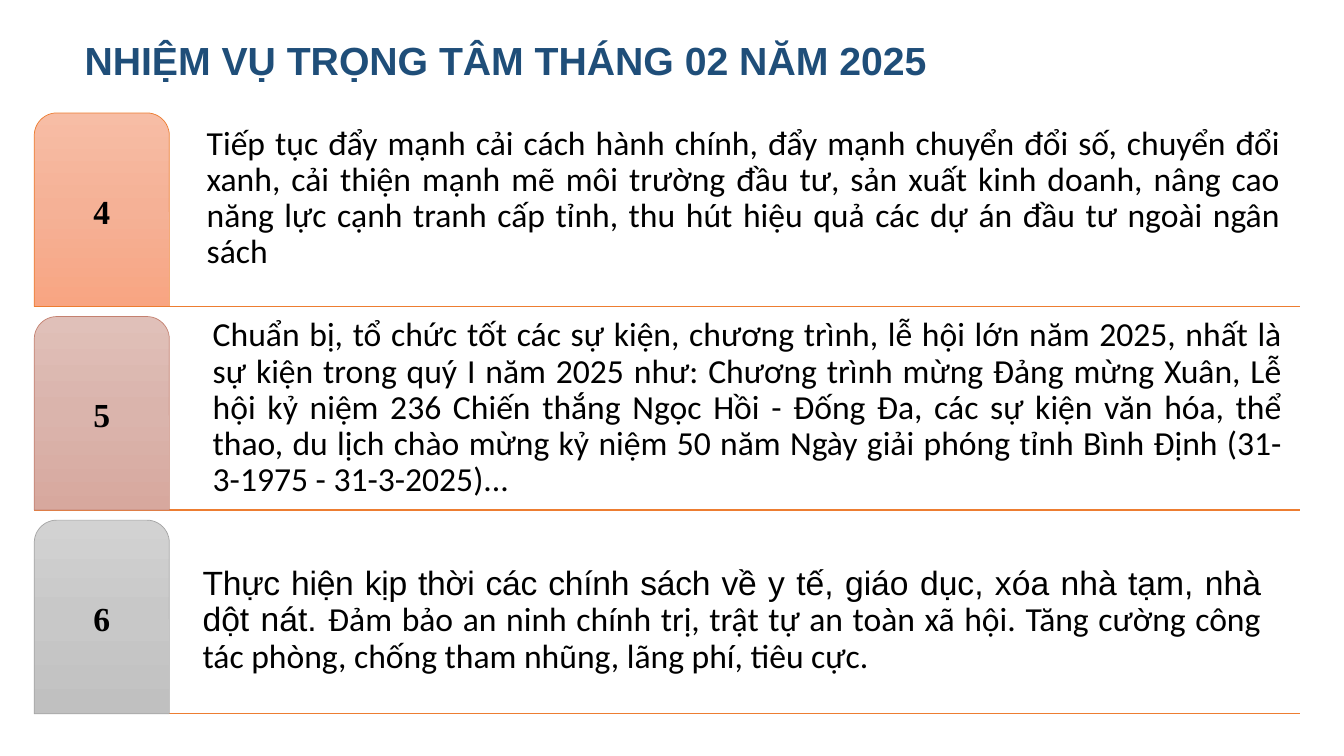
from copy import deepcopy

from pptx import Presentation
from pptx.dml.color import RGBColor
from pptx.enum.shapes import MSO_CONNECTOR, MSO_SHAPE
from pptx.enum.text import MSO_ANCHOR as Anchor, MSO_AUTO_SIZE as AutoSize, PP_ALIGN as Align
from pptx.oxml.ns import qn
from pptx.oxml.xmlchemy import OxmlElement
from pptx.util import Inches, Pt

COLORS = {"title": "1F4E79", "text": "000000", "rule": "ED7D31"}

TAB_LEFT, TAB_TOP, TAB_WIDTH, TAB_HEIGHT = 0.34, 1.12, 1.34, 1.92
ROW_PITCH = 2.02
RULE_RIGHT = 12.89
NUMBER_INSET = 0.07

# Each task: number, gradient colours, outline, text box, text runs with format
TASKS = [
    ("4", ("F7BDA5", "F5B196", "F8A582"), "ED7D31", (2, 1.74, 10.75, 1), [
        ("Tiếp tục đẩy mạnh cải cách hành chính, đẩy mạnh chuyển đổi số, "
         "chuyển đổi xanh, cải thiện mạnh mẽ môi trường đầu tư, sản xuất kinh doanh, "
         "nâng cao năng lực cạnh tranh cấp tỉnh, thu hút hiệu quả các dự án đầu tư "
         "ngoài ngân sách", "Calibri", 0)]),
    ("5", ("E0C0B9", "DAB4AC", "D7A89E"), "C48170", (2.06, 3.08, 10.71, 1.92), [
        ("Chuẩn bị, tổ chức tốt các sự kiện, chương trình, lễ hội lớn năm 2025, "
         "nhất là sự kiện trong quý I năm 2025 như: Chương trình mừng Đảng mừng Xuân, "
         "Lễ hội kỷ niệm 236 Chiến thắng Ngọc Hồi - Đống Đa, các sự kiện văn hóa, "
         "thể thao, du lịch chào mừng kỷ niệm 50 năm Ngày giải phóng tỉnh Bình Định "
         "(31-3-1975 - 31-3-2025)...", "Calibri", 0)]),
    ("6", ("D2D2D2", "C8C8C8", "C0C0C0"), "A5A5A5", (1.96, 5.48, 10.6, 1.27), [
        ("Thực hiện kịp thời các chính sách về ", "Arial", -0.2),
        ("y tế, giáo dục, xóa nhà tạm, nhà dột nát. ", "Arial", 0),
        ("Đảm bảo an ninh chính trị, trật tự an toàn xã hội. Tăng cường công tác "
         "phòng, chống tham nhũng, lãng phí, tiêu cực.", "Calibri", 0)]),
]


def apply(target, values):
    for name, value in values.items():
        setattr(target, name, value)


class SlideBuilder:
    """Holds the style and the current page."""

    def __init__(self, page, colors):
        self.page = page
        self.colors = colors

    def rule(self, left, right, y):
        line = self.page.shapes.add_connector(
            MSO_CONNECTOR.STRAIGHT, Inches(left), Inches(y), Inches(right), Inches(y))
        line.line.color.rgb = RGBColor.from_string(self.colors["rule"])
        line.line.width = Pt(1)
        line._element.spPr.append(OxmlElement("a:effectLst"))

    def tab(self, frame, gradient, outline):
        """Add a shape with rounded top corners and a top-to-bottom gradient."""
        shape = self.page.shapes.add_shape(
            MSO_SHAPE.ROUND_2_SAME_RECTANGLE, *map(Inches, frame))
        shape.adjustments[0] = 0.167
        shape.shadow.inherit = False
        shape.line.color.rgb = RGBColor.from_string(outline)
        shape.line.width = Pt(0.5)
        shape.fill.gradient()
        shape.fill.gradient_angle = 270
        stops = shape._element.spPr.find(".//" + qn("a:gsLst"))
        stops.insert(1, deepcopy(stops[0]))
        for index, (stop, color) in enumerate(zip(shape.fill.gradient_stops, gradient)):
            stop.position = index / 2
            stop.color.rgb = RGBColor.from_string(color)

    def text(self, frame, runs, size=24, color="text", bold=False, align=Align.LEFT,
             anchor=Anchor.TOP, spacing=0.9, inset=0.05, auto_size=AutoSize.NONE):
        """Add one paragraph; each run is (text, font name, letter spacing in points)."""
        box = self.page.shapes.add_textbox(*map(Inches, frame))
        apply(box.text_frame, {"word_wrap": True, "auto_size": auto_size,
                               "vertical_anchor": anchor})
        if inset is not None:
            sides = ("left", "top", "right", "bottom")
            apply(box.text_frame, {f"margin_{side}": Inches(inset) for side in sides})
        para = box.text_frame.paragraphs[0]
        apply(para, {"alignment": align, "line_spacing": spacing})
        for content, font, tracking in runs:
            span = para.add_run()
            span.text = content
            apply(span.font, {"name": font, "size": Pt(size), "bold": bold})
            span.font.color.rgb = RGBColor.from_string(self.colors[color])
            if tracking:
                span.font._element.set("spc", str(round(tracking * 100)))


def main():
    deck = Presentation()
    apply(deck, {"slide_width": Inches(13.33), "slide_height": Inches(7.5)})
    builder = SlideBuilder(deck.slides.add_slide(deck.slide_layouts[6]), COLORS)

    for row in reversed(range(len(TASKS))):
        builder.rule(TAB_LEFT, RULE_RIGHT, TAB_TOP + TAB_HEIGHT + row * ROW_PITCH)

    for row, (number, gradient, outline, frame, runs) in enumerate(TASKS):
        top = TAB_TOP + row * ROW_PITCH
        builder.text(frame, runs, align=Align.JUSTIFY, anchor=Anchor.BOTTOM)
        builder.tab((TAB_LEFT, top, TAB_WIDTH, TAB_HEIGHT), gradient, outline)
        builder.text((TAB_LEFT + NUMBER_INSET, top + NUMBER_INSET,
                      TAB_WIDTH - 2 * NUMBER_INSET, TAB_HEIGHT - NUMBER_INSET),
                     [(number, "Times New Roman", 0)], bold=True,
                     align=Align.CENTER, anchor=Anchor.MIDDLE)

    builder.text((0.74, 0.31, 8.7, 0.57),
                 [("NHIỆM VỤ TRỌNG TÂM THÁNG 02 NĂM 2025", "Arial", 0)],
                 size=28, color="title", bold=True, spacing=1.0, inset=None,
                 auto_size=AutoSize.SHAPE_TO_FIT_TEXT)
    deck.save("out.pptx")


if __name__ == "__main__":
    main()
